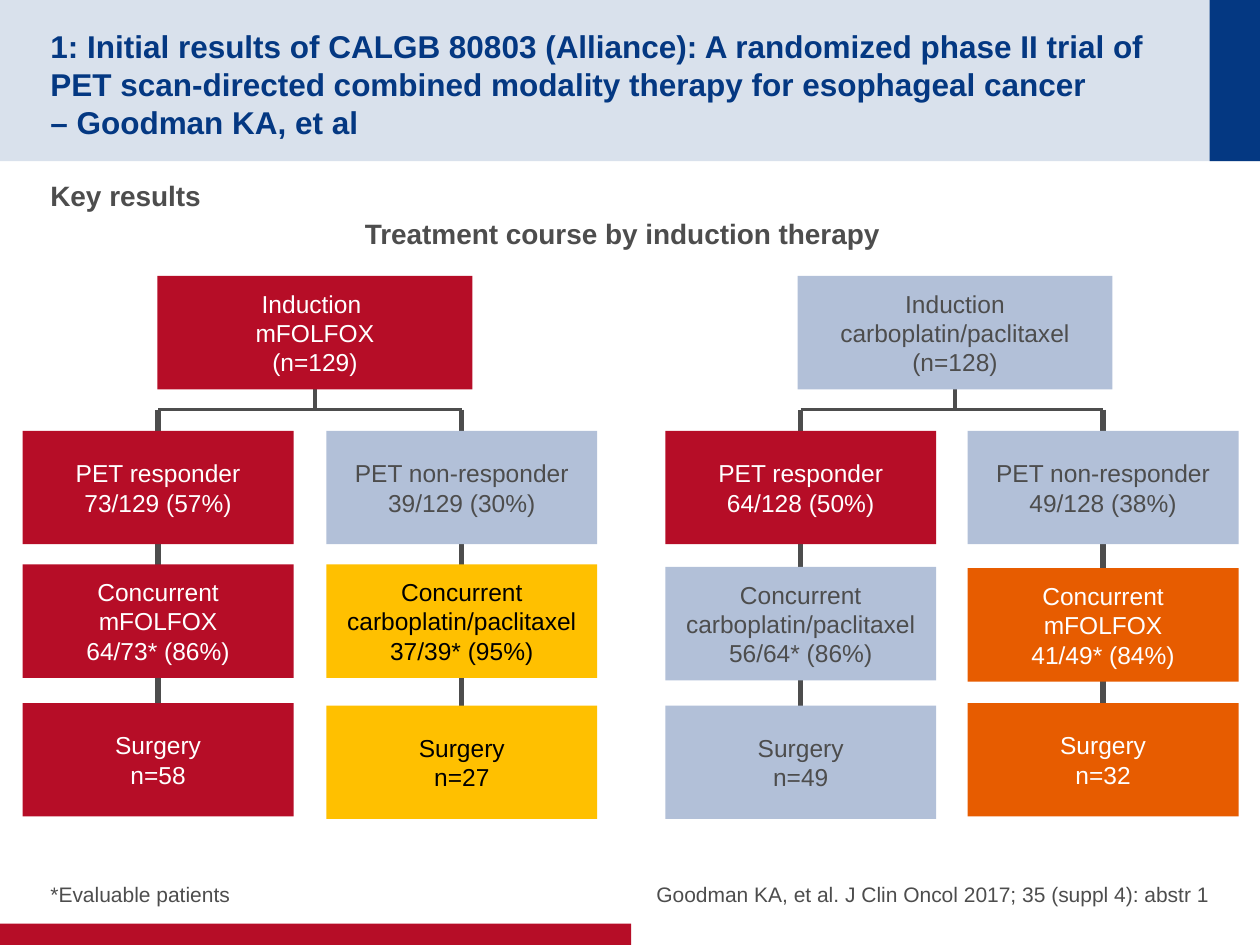
from lxml import etree
from pptx import Presentation
from pptx.dml.color import RGBColor
from pptx.enum import shapes, text
from pptx.oxml.ns import qn
from pptx.util import Inches, Pt

NAVY = RGBColor(0x04, 0x38, 0x82)
PALE_NAVY = RGBColor(0xD9, 0xE1, 0xEC)
RED = RGBColor(0xB6, 0x0D, 0x27)
STEEL = RGBColor(0xB2, 0xC0, 0xD8)
AMBER = RGBColor(0xFF, 0xC0, 0x00)
ORANGE = RGBColor(0xE7, 0x5C, 0x00)
GRAY = RGBColor(0x4D, 0x4D, 0x4D)
WHITE = RGBColor(0xFF, 0xFF, 0xFF)
BLACK = RGBColor(0x00, 0x00, 0x00)
TEXT_ON = {RED: WHITE, ORANGE: WHITE, STEEL: GRAY, AMBER: BLACK}

LEFT, CENTER, RIGHT = text.PP_ALIGN.LEFT, text.PP_ALIGN.CENTER, text.PP_ALIGN.RIGHT
TOP, MIDDLE, BOTTOM = text.MSO_ANCHOR.TOP, text.MSO_ANCHOR.MIDDLE, text.MSO_ANCHOR.BOTTOM

BANDS = [
    (0, 0, 10, 1.28, PALE_NAVY),
    (9.6, 0, 0.4, 1.28, NAVY),
    (0, 7.33, 5.01, 0.17, RED),
]

TITLE = ("1: Initial results of CALGB 80803 (Alliance): A randomized phase II trial of "
         "PET scan-directed combined modality therapy for esophageal cancer "
         "\v– Goodman KA, et al")

# text, (left, top, width, height), size, bold, color, align, anchor, (top, bottom) inset
LABELS = [
    (TITLE, (0.4, 0.2, 9.01, 0.88), 18, True, NAVY, LEFT, MIDDLE, (0.05, 0)),
    ("Key results", (0.4, 1.37, 9.2, 0.55), 16, True, GRAY, LEFT, TOP, (0.05, 0.05)),
    ("Treatment course by induction therapy", (2.7, 1.67, 4.48, 0.37), 16, True, GRAY,
     CENTER, TOP, (0.05, 0.05)),
    ("*Evaluable patients", (0.4, 6.67, 4.52, 0.53), 12, False, GRAY, LEFT, BOTTOM, (0, 0)),
    ("Goodman KA, et al. J Clin Oncol 2017; 35 (suppl 4): abstr 1",
     (5.08, 6.67, 4.52, 0.53), 12, False, GRAY, RIGHT, BOTTOM, (0, 0)),
]

# Each branch lists its boxes downwards: (top, fill, text)
ARMS = [
    {
        "induction": (1.25, RED, "Induction \nmFOLFOX\n(n=129)"),
        "branches": [
            (0.18, [(3.42, RED, "PET responder\n73/129 (57%)"),
                    (4.48, RED, "Concurrent mFOLFOX\n64/73* (86%)"),
                    (5.58, RED, "Surgery\nn=58")]),
            (2.59, [(3.42, STEEL, "PET non-responder\n39/129 (30%)"),
                    (4.48, AMBER, "Concurrent carboplatin/paclitaxel\n37/39* (95%)"),
                    (5.6, AMBER, "Surgery\nn=27")]),
        ],
    },
    {
        "induction": (6.33, STEEL, "Induction\ncarboplatin/paclitaxel\n(n=128)"),
        "branches": [
            (5.28, [(3.42, RED, "PET responder\n64/128 (50%)"),
                    (4.5, STEEL, "Concurrent carboplatin/paclitaxel\n56/64* (86%)"),
                    (5.6, STEEL, "Surgery\nn=49")]),
            (7.68, [(3.42, STEEL, "PET non-responder\n49/128 (38%)"),
                    (4.51, ORANGE, "Concurrent mFOLFOX\n41/49* (84%)"),
                    (5.58, ORANGE, "Surgery\nn=32")]),
        ],
    },
]
INDUCTION_TOP, INDUCTION_WIDTH = 2.19, 2.5
BOX_WIDTH, BOX_HEIGHT = 2.15, 0.9
TRUNK_TOP, FORK_Y, STEM_BOTTOM = 2.92, 3.25, 6.03


def set_text(shape, words, size, color, bold=False, align=CENTER, anchor=MIDDLE,
             side_inset=0.1, insets=(0, 0)):
    frame = shape.text_frame
    frame.word_wrap = True
    frame.vertical_anchor = anchor
    frame.margin_left = frame.margin_right = Inches(side_inset)
    frame.margin_top, frame.margin_bottom = map(Inches, insets)
    frame.text = words
    for para in frame.paragraphs:
        para.alignment = align
        for span in para.runs:
            span.font.name = "Arial"
            span.font.size = Pt(size)
            span.font.bold = bold
            span.font.color.rgb = color


def add_box(slide, left, top, width, height, fill):
    box = slide.shapes.add_shape(shapes.MSO_SHAPE.RECTANGLE,
                                 *map(Inches, (left, top, width, height)))
    box.shadow.inherit = False
    box.fill.solid()
    box.fill.fore_color.rgb = fill
    box.line.fill.background()
    return box


def add_line(slide, x1, y1, x2, y2, weight):
    line = slide.shapes.add_connector(shapes.MSO_CONNECTOR.STRAIGHT,
                                      *map(Inches, (x1, y1, x2, y2)))
    line.line.color.rgb = GRAY
    line.line.width = Pt(weight)
    etree.SubElement(line._element.spPr, qn("a:effectLst"))


def add_arm(slide, arm):
    """Draw one treatment arm: its tree of lines, then the boxes over them."""
    left, fill, words = arm["induction"]
    stems = [branch_left + BOX_WIDTH / 2 for branch_left, _ in arm["branches"]]
    for x in stems:
        add_line(slide, x, FORK_Y, x, STEM_BOTTOM, 3)
    add_line(slide, stems[0], FORK_Y, stems[-1], FORK_Y, 2.25)
    trunk = left + INDUCTION_WIDTH / 2
    add_line(slide, trunk, TRUNK_TOP, trunk, FORK_Y, 2.25)

    boxes = [(left, INDUCTION_TOP, INDUCTION_WIDTH, fill, words)]
    for branch_left, steps in arm["branches"]:
        boxes += [(branch_left, top, BOX_WIDTH, *step) for top, *step in steps]
    for left, top, width, fill, words in boxes:
        box = add_box(slide, left, top, width, BOX_HEIGHT, fill)
        set_text(box, words, 14, TEXT_ON[fill])


def main():
    deck = Presentation()
    deck.slide_width, deck.slide_height = Inches(10), Inches(7.5)
    slide = deck.slides.add_slide(deck.slide_layouts[6])
    for band in BANDS:
        add_box(slide, *band)
    for words, place, size, bold, color, align, anchor, insets in LABELS:
        label = slide.shapes.add_textbox(*map(Inches, place))
        set_text(label, words, size, color, bold, align, anchor, 0, insets)
    for arm in ARMS:
        add_arm(slide, arm)
    deck.save("out.pptx")


if __name__ == "__main__":
    main()
